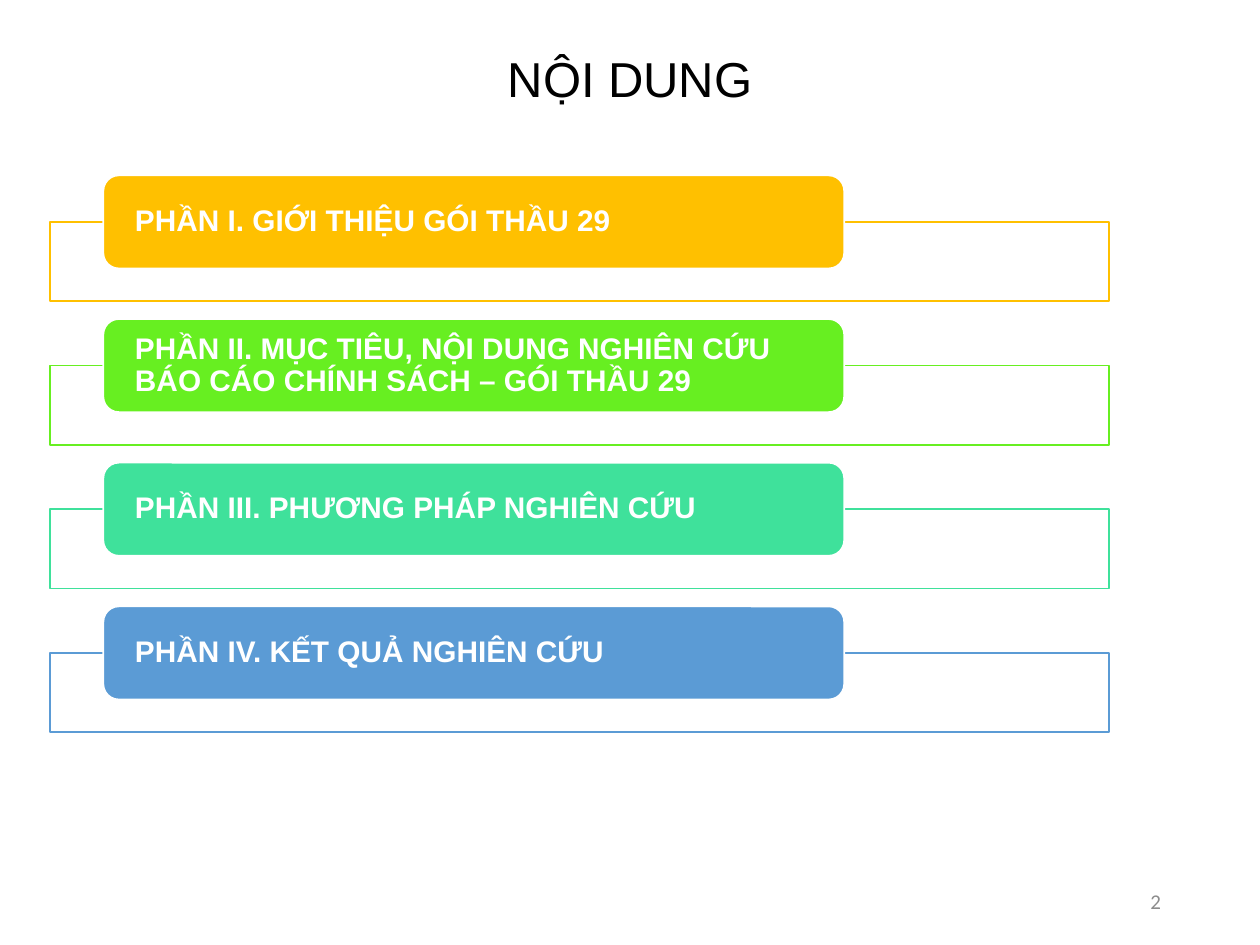
from pptx import Presentation
from pptx.dml.color import RGBColor
from pptx.enum.shapes import MSO_SHAPE
from pptx.enum.text import MSO_ANCHOR, PP_ALIGN
from pptx.util import Pt

SECTIONS = [
    ("PHẦN I. GIỚI THIỆU GÓI THẦU 29", "FFC000"),
    ("PHẦN II. MỤC TIÊU, NỘI DUNG NGHIÊN CỨU BÁO CÁO CHÍNH SÁCH – GÓI THẦU 29", "67EF21"),
    ("PHẦN III. PHƯƠNG PHÁP NGHIÊN CỨU", "3FE19B"),
    ("PHẦN IV. KẾT QUẢ NGHIÊN CỨU", "5B9BD5"),
]
ROW_STEP = 82.1
LABEL_HEIGHT = 53.2
FRAME_HEIGHT = 45.4


def color(value):
    return RGBColor.from_string(value)


def style_text(tf, text, size, font, text_color, align, bold=False):
    tf.word_wrap = True
    tf.vertical_anchor = MSO_ANCHOR.MIDDLE
    p = tf.paragraphs[0]
    p.text = text
    p.alignment = align
    p.font.size = Pt(size)
    p.font.name = font
    p.font.bold = bold
    p.font.color.rgb = color(text_color)
    return p


def add_box(s, kind, left, top, width, height, fill, line):
    sp = s.shapes.add_shape(kind, Pt(left), Pt(top), Pt(width), Pt(height))
    sp.shadow.inherit = False
    sp.fill.solid()
    sp.fill.fore_color.rgb = color(fill)
    sp.line.color.rgb = color(line)
    sp.line.width = Pt(1)
    return sp


def add_title(s, left, top, width, height):
    sp = s.shapes.title
    sp.left, sp.top, sp.width, sp.height = Pt(left), Pt(top), Pt(width), Pt(height)
    p = style_text(sp.text_frame, "NỘI DUNG", 28, "Arial", "000000", PP_ALIGN.CENTER)
    p.line_spacing = 0.9


def add_section(s, left, top, width, text, accent):
    """Outlined frame whose top edge runs behind the middle of a label."""
    add_box(s, MSO_SHAPE.RECTANGLE, left, top + LABEL_HEIGHT / 2,
            width, FRAME_HEIGHT, "FFFFFF", accent)
    label = add_box(s, MSO_SHAPE.ROUNDED_RECTANGLE, left + width * 0.05, top,
                    width * 0.7, LABEL_HEIGHT, accent, "FFFFFF")
    tf = label.text_frame
    tf.margin_left = tf.margin_right = Pt(15.5)
    tf.margin_top = tf.margin_bottom = 0
    p = style_text(tf, text, 17, "Arial", "FFFFFF", PP_ALIGN.LEFT, bold=True)
    p.line_spacing = 0.9


def add_agenda(s, left, top, width):
    for i, (text, accent) in enumerate(SECTIONS):
        add_section(s, left, top + i * ROW_STEP, width, text, accent)


def add_page_number(s, left, top, width, height):
    sp = s.shapes.add_textbox(Pt(left), Pt(top), Pt(width), Pt(height))
    style_text(sp.text_frame, "2", 12, "Calibri", "8C8C8C", PP_ALIGN.RIGHT)


def main():
    prs = Presentation()
    prs.slide_width, prs.slide_height = Pt(720), Pt(540)
    s = prs.slides.add_slide(prs.slide_layouts[5])
    add_title(s, 49.5, 18, 621, 57.6)
    add_agenda(s, 28.8, 100.2, 604.8)
    add_page_number(s, 508.5, 500.5, 162, 28.75)
    prs.save("out.pptx")


if __name__ == "__main__":
    main()
